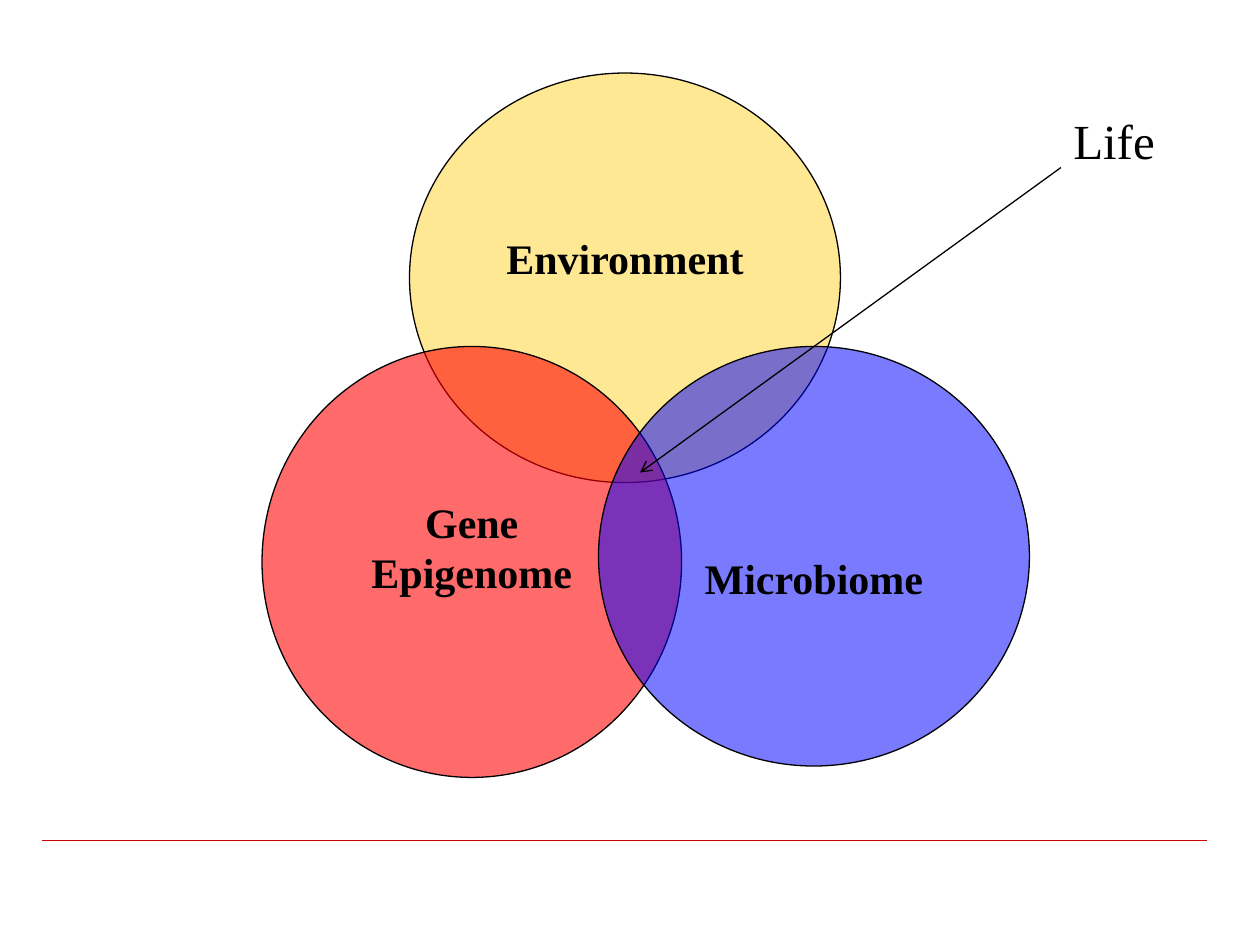
from lxml import etree
from pptx import Presentation
from pptx.dml.color import RGBColor
from pptx.enum.shapes import MSO_CONNECTOR, MSO_SHAPE
from pptx.enum.text import MSO_ANCHOR, PP_ALIGN
from pptx.oxml.ns import qn
from pptx.util import Inches, Pt

OVAL = MSO_SHAPE.OVAL
STRAIGHT = MSO_CONNECTOR.STRAIGHT
TOP = MSO_ANCHOR.TOP
LEFT, CENTER = PP_ALIGN.LEFT, PP_ALIGN.CENTER

BLACK = RGBColor(0x00, 0x00, 0x00)
YELLOW = RGBColor(0xFF, 0xCE, 0x13)
RED = RGBColor(0xFF, 0x00, 0x00)
BLUE = RGBColor(0x00, 0x00, 0xFF)
RULE_RED = RGBColor(0xCC, 0x00, 0x00)

FONT = "Times New Roman"
LINE_WIDTH = Pt(0.75)

# left, top, width, height, colour, opacity in percent, space above the label, label lines
CIRCLES = [
    (3.25, 0.58, 3.42, 3.25, YELLOW, 45, 0.79, ["Environment"]),
    (2.08, 2.75, 3.33, 3.42, RED, 58, 0.69, ["Gene", "Epigenome"]),
    (4.75, 2.75, 3.42, 3.33, BLUE, 52, 1.15, ["Microbiome"]),
]


def write_lines(text_frame, lines, alignment, font_format):
    for index, line in enumerate(lines):
        paragraph = text_frame.paragraphs[0] if index == 0 else text_frame.add_paragraph()
        paragraph.alignment = alignment
        run = paragraph.add_run()
        run.text = line
        run.font.color.rgb = BLACK
        for name, value in font_format.items():
            setattr(run.font, name, value)


def set_opacity(shape, percent):
    colour = shape.fill._xPr.find(qn("a:solidFill"))[0]
    etree.SubElement(colour, qn("a:alpha")).set("val", str(percent * 1000))


def add_circle(slide, left, top, width, height, colour, opacity, label_space, lines):
    circle = slide.shapes.add_shape(
        OVAL, Inches(left), Inches(top), Inches(width), Inches(height))
    circle.shadow.inherit = False
    circle.fill.solid()
    circle.fill.fore_color.rgb = colour
    set_opacity(circle, opacity)
    circle.line.color.rgb = BLACK
    circle.line.width = LINE_WIDTH
    text_frame = circle.text_frame
    frame_format = {
        "word_wrap": True,
        "vertical_anchor": TOP,
        "margin_top": Inches(label_space),
    }
    for name, value in frame_format.items():
        setattr(text_frame, name, value)
    write_lines(text_frame, lines, CENTER, {"name": FONT, "size": Pt(24), "bold": True})


def add_line(slide, start, end, colour, arrow=False):
    connector = slide.shapes.add_connector(
        STRAIGHT, *(Inches(value) for value in (*start, *end)))
    connector.line.color.rgb = colour
    connector.line.width = LINE_WIDTH
    if arrow:
        line = connector.line._get_or_add_ln()
        etree.SubElement(line, qn("a:tailEnd")).set("type", "arrow")
    etree.SubElement(connector._element.spPr, qn("a:effectLst"))


def add_callout(slide, left, top, width, height, text, target):
    """Label with an arrow from its left edge to the target point."""
    add_line(slide, (left, top + 0.5), target, BLACK, arrow=True)
    box = slide.shapes.add_textbox(
        Inches(left), Inches(top), Inches(width), Inches(height))
    box.text_frame.word_wrap = True
    write_lines(box.text_frame, [text], LEFT, {"name": FONT, "size": Pt(28)})


def main():
    presentation = Presentation()
    presentation.slide_width = Inches(10)
    presentation.slide_height = Inches(7.5)
    slide = presentation.slides.add_slide(presentation.slide_layouts[6])
    add_line(slide, (0.33, 6.67), (9.58, 6.67), RULE_RED)
    for circle in CIRCLES:
        add_circle(slide, *circle)
    add_callout(slide, 8.42, 0.83, 1, 0.57, "Life", target=(5.08, 3.75))
    presentation.save("out.pptx")


if __name__ == "__main__":
    main()
